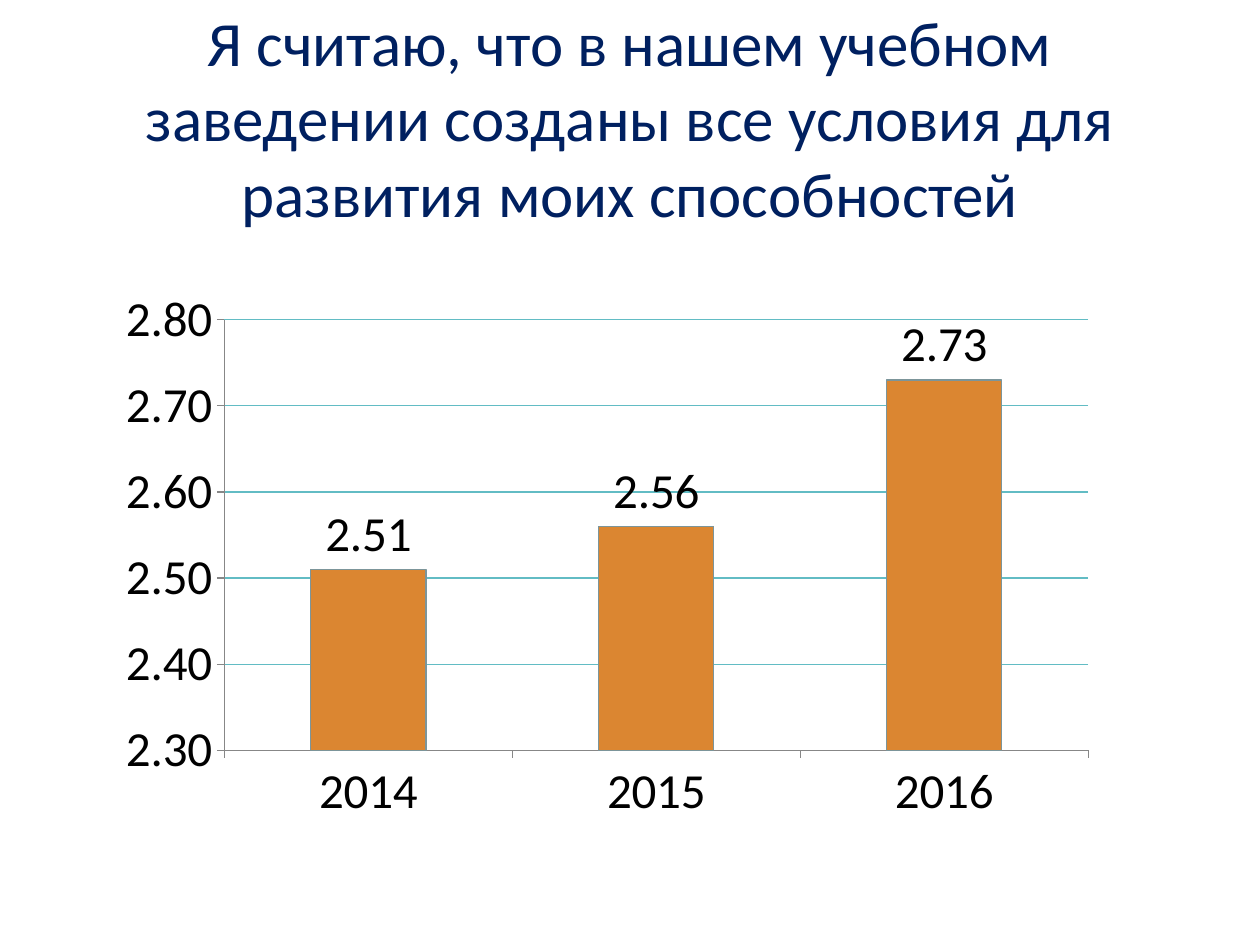
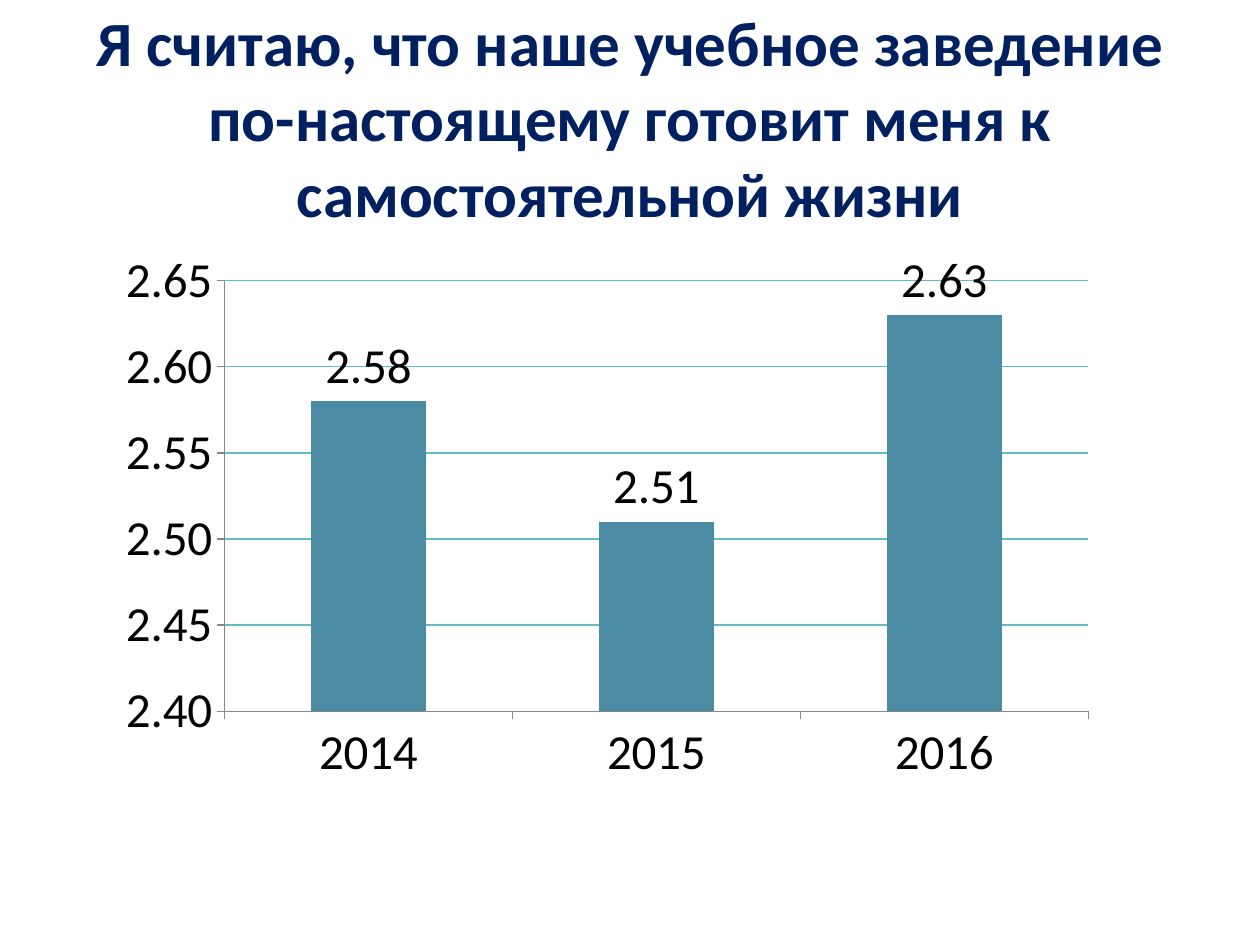
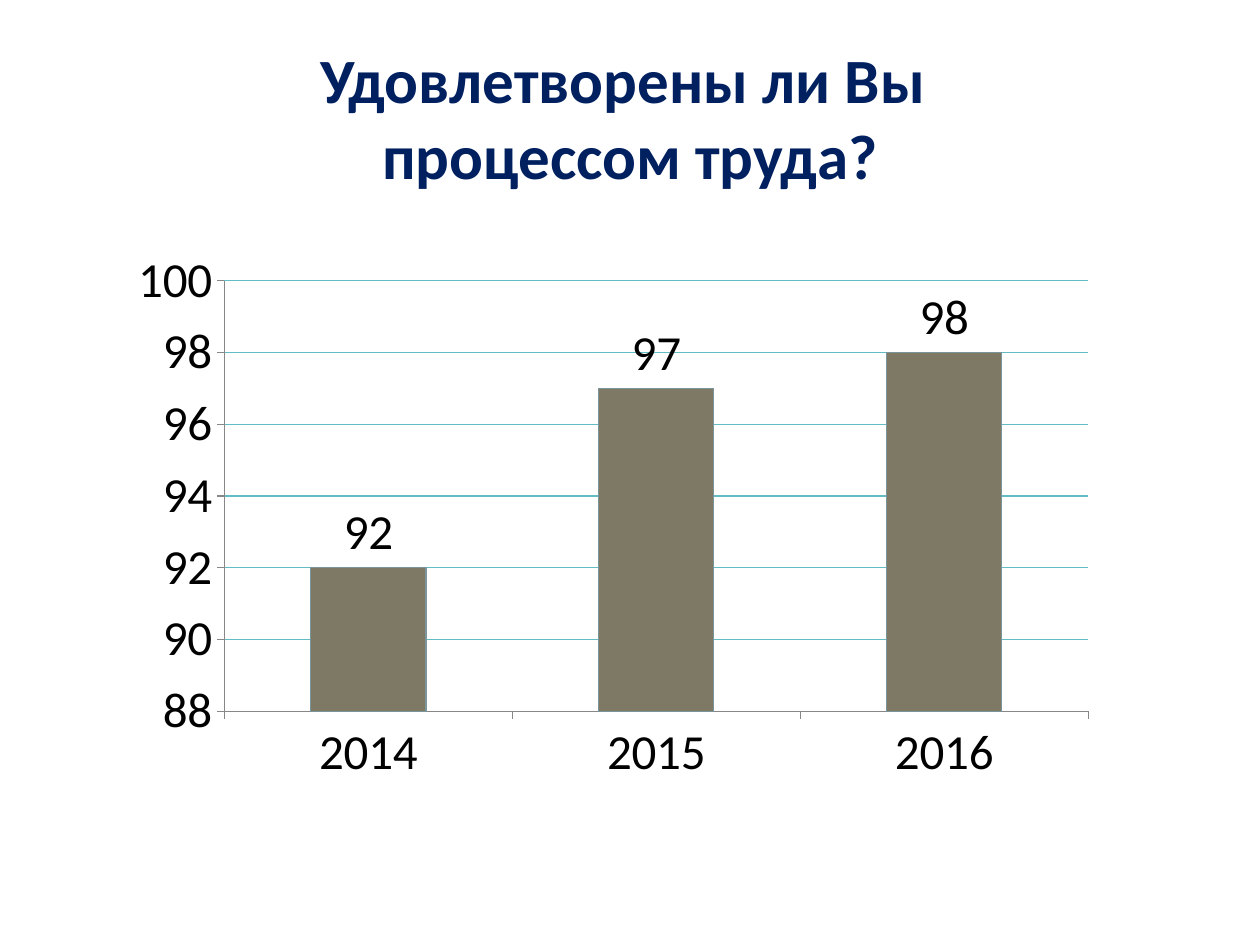
import pptx
import pptx.chart.data
import pptx.dml.color
import pptx.enum.chart
import pptx.enum.text
import pptx.oxml
import pptx.oxml.ns
import pptx.util
from pptx.util import Inches, Pt

FONT = "Calibri"
TITLE_COLOR, TEXT_COLOR = "002060", "000000"
AXIS_COLOR, GRID_COLOR, BAR_LINE_COLOR = "878787", "62BCC4", "7C959A"
TITLE_BOX = (0.5, 0.3, 9, 1.25)
CHART_LEFT, CHART_WIDTH, CHART_HEIGHT = 0.83, 8.27, 4.99
PLOT_AREA = {"x": 0.115, "y": 0.152, "w": 0.829, "h": 0.685}
YEARS = ["2014", "2015", "2016"]

SURVEYS = [
    {
        "title": ["Я считаю, что в нашем учебном заведении созданы все условия "
                  "для развития моих способностей"],
        "bold": False, "chart_top": 1.78, "values": [2.51, 2.56, 2.73],
        "scale": (2.3, 2.8, 0.1), "format": "0.00",
        "bar_color": "DB8631", "outlined": True,
    },
    {
        "title": ["Я считаю, что наше учебное заведение по-настоящему готовит "
                  "меня к самостоятельной жизни"],
        "bold": True, "chart_top": 1.47, "values": [2.58, 2.51, 2.63],
        "scale": (2.4, 2.65, 0.05), "format": "0.00",
        "bar_color": "4C8BA4", "outlined": False,
    },
    {
        "title": ["Удовлетворены ли Вы ", "процессом труда?"],
        "bold": True, "chart_top": 1.47, "values": [92, 97, 98],
        "scale": (88, 100, 2), "format": "0",
        "bar_color": "7D7965", "outlined": True,
    },
]


def rgb(hex_color):
    return pptx.dml.color.RGBColor.from_string(hex_color)


def style_font(font, size, color, bold=False):
    font.name, font.size, font.bold = FONT, Pt(size), bold
    font.color.rgb = rgb(color)


def style_line(line, color):
    line.color.rgb = rgb(color)
    line.width = Pt(0.75)


def add_title(slide, lines, bold):
    shape = slide.shapes.add_textbox(*map(Inches, TITLE_BOX))
    frame = shape.text_frame
    frame.word_wrap = True
    frame.vertical_anchor = pptx.enum.text.MSO_ANCHOR.MIDDLE
    paragraph = frame.paragraphs[0]
    paragraph.alignment = pptx.enum.text.PP_ALIGN.CENTER
    for index, text in enumerate(lines):
        if index:
            paragraph.add_line_break()
        run = paragraph.add_run()
        run.text = text
        style_font(run.font, 36, TITLE_COLOR, bold)


def fix_plot_area(chart):
    """Pin the inner plot area to fixed fractions of the chart."""
    modes = "".join(f'<c:{side}Mode val="edge"/>' for side in "xy")
    sizes = "".join(f'<c:{side} val="{share}"/>' for side, share in PLOT_AREA.items())
    layout = pptx.oxml.parse_xml(
        f'<c:layout {pptx.oxml.ns.nsdecls("c")}><c:manualLayout>'
        f'<c:layoutTarget val="inner"/>{modes}{sizes}</c:manualLayout></c:layout>')
    plot_area = chart._chartSpace.chart.plotArea
    for old_layout in plot_area.findall(pptx.oxml.ns.qn("c:layout")):
        plot_area.remove(old_layout)
    plot_area.insert(0, layout)


def add_survey_chart(slide, survey):
    data = pptx.chart.data.CategoryChartData(number_format=survey["format"])
    data.categories = YEARS
    data.add_series("Series 1", survey["values"])
    box = (CHART_LEFT, survey["chart_top"], CHART_WIDTH, CHART_HEIGHT)
    chart = slide.shapes.add_chart(
        pptx.enum.chart.XL_CHART_TYPE.COLUMN_CLUSTERED, *map(Inches, box), data).chart
    chart.has_legend = chart.has_title = False
    style_font(chart.font, 28, TEXT_COLOR)
    fix_plot_area(chart)

    for axis in (chart.category_axis, chart.value_axis):
        axis.major_tick_mark = pptx.enum.chart.XL_TICK_MARK.OUTSIDE
        axis.minor_tick_mark = pptx.enum.chart.XL_TICK_MARK.NONE
        style_line(axis.format.line, AXIS_COLOR)
    value_axis = chart.value_axis
    value_axis.minimum_scale, value_axis.maximum_scale, value_axis.major_unit = survey["scale"]
    value_axis.tick_labels.number_format = survey["format"]
    value_axis.tick_labels.number_format_is_linked = False
    style_line(value_axis.major_gridlines.format.line, GRID_COLOR)

    plot = chart.plots[0]
    plot.gap_width = 150
    plot.vary_by_categories = False
    series = plot.series[0]
    series.format.fill.solid()
    series.format.fill.fore_color.rgb = rgb(survey["bar_color"])
    if survey["outlined"]:
        style_line(series.format.line, BAR_LINE_COLOR)
    else:
        series.format.line.fill.background()
    labels = series.data_labels
    labels.show_value = True
    labels.number_format = survey["format"]
    labels.number_format_is_linked = False
    labels.position = pptx.enum.chart.XL_LABEL_POSITION.OUTSIDE_END
    style_font(labels.font, 28, TEXT_COLOR)


def main():
    presentation = pptx.Presentation()
    presentation.slide_width, presentation.slide_height = Inches(10), Inches(7.5)
    for survey in SURVEYS:
        slide = presentation.slides.add_slide(presentation.slide_layouts[6])
        add_title(slide, survey["title"], survey["bold"])
        add_survey_chart(slide, survey)
    presentation.save("out.pptx")


if __name__ == "__main__":
    main()
